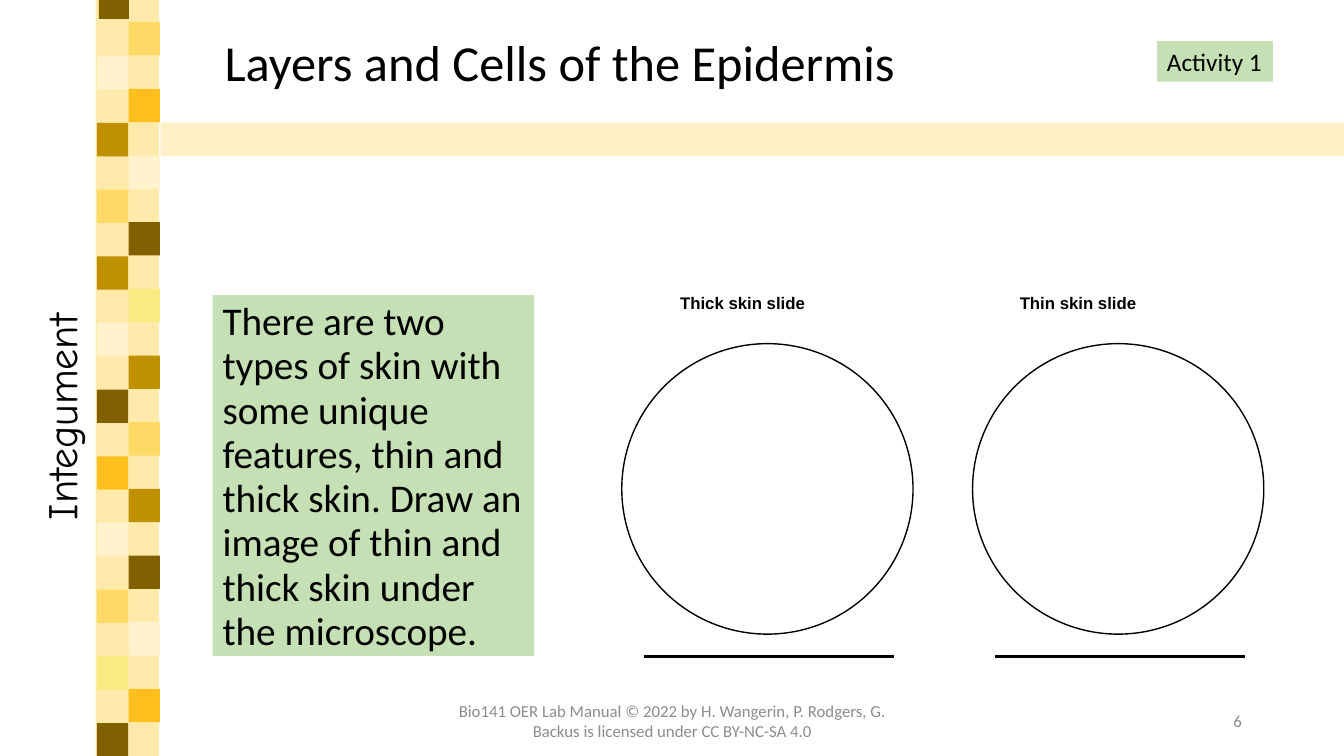
import pptx
import pptx.dml.color
import pptx.enum.shapes
import pptx.enum.text
import pptx.oxml.ns
import pptx.util
from lxml import etree

Cm = pptx.util.Cm
Pt = pptx.util.Pt
RGBColor = pptx.dml.color.RGBColor
Shape = pptx.enum.shapes.MSO_SHAPE
Align = pptx.enum.text.PP_ALIGN
Anchor = pptx.enum.text.MSO_ANCHOR
qn = pptx.oxml.ns.qn

BLACK = RGBColor(0x00, 0x00, 0x00)
WHITE = RGBColor(0xFF, 0xFF, 0xFF)
GREY = RGBColor(0x8C, 0x8C, 0x8C)
GREEN = RGBColor(0xC5, 0xE0, 0xB4)
BAND = RGBColor(0xFF, 0xE6, 0x99)
BROWN = RGBColor(0x80, 0x60, 0x00)
OCHRE = RGBColor(0xBF, 0x90, 0x00)
AMBER = RGBColor(0xFF, 0xBF, 0x1D)
GOLD = RGBColor(0xFF, 0xD9, 0x66)
LEMON = RGBColor(0xFB, 0xEA, 0x82)
CREAM = RGBColor(0xFF, 0xF2, 0xCC)

SLIDE_WIDTH, SLIDE_HEIGHT = 33.87, 19.05
TILE_WIDTH, TILE_HEIGHT, TILE_PITCH = 0.79, 0.84, 1.68
# Left edge, first top and colours from the top down
TILE_COLUMNS = [
    (2.44, 1.42, [CREAM, OCHRE, GOLD, OCHRE, CREAM, BROWN,
                  AMBER, CREAM, GOLD, LEMON, BROWN]),
    (3.24, 0.56, [GOLD, AMBER, CREAM, BROWN, LEMON, OCHRE,
                  GOLD, OCHRE, BROWN, CREAM, AMBER]),
]
DRAWING_LEFTS = [15.67, 24.51]


def add_block(slide, left, top, width, height, color, opacity=100):
    """Add a borderless rectangle; opacity is a percentage."""
    block = slide.shapes.add_shape(
        Shape.RECTANGLE, Cm(left), Cm(top), Cm(width), Cm(height))
    block.shadow.inherit = False
    block.fill.solid()
    block.fill.fore_color.rgb = color
    block.line.fill.background()
    if opacity < 100:
        color_node = block._element.spPr.find(".//" + qn("a:srgbClr"))
        alpha = etree.SubElement(color_node, qn("a:alpha"))
        alpha.set("val", str(opacity * 1000))


def add_text(slide, left, top, width, height, text, size, font="Calibri",
             color=BLACK, fill=None, align=Align.LEFT, anchor=Anchor.TOP,
             spacing=None, bold=False, wrap=True):
    box = slide.shapes.add_textbox(Cm(left), Cm(top), Cm(width), Cm(height))
    if fill is not None:
        box.fill.solid()
        box.fill.fore_color.rgb = fill
    frame = box.text_frame
    frame.word_wrap = wrap
    frame.vertical_anchor = anchor
    para = frame.paragraphs[0]
    para.alignment = align
    if spacing:
        para.line_spacing = spacing
    span = para.add_run()
    span.text = text
    span.font.name = font
    span.font.size = Pt(size)
    span.font.bold = bold
    span.font.color.rgb = color
    return box


def add_tab_stop(para, position):
    tabs = etree.SubElement(para._p.get_or_add_pPr(), qn("a:tabLst"))
    tab = etree.SubElement(tabs, qn("a:tab"))
    tab.set("pos", str(Cm(position)))
    tab.set("algn", "l")


def add_tiles(slide):
    add_block(slide, 2.49, 0, 0.76, 0.48, BROWN)
    for left, first_top, colors in TILE_COLUMNS:
        for row, color in enumerate(colors):
            add_block(slide, left, first_top + row * TILE_PITCH,
                      TILE_WIDTH, TILE_HEIGHT, color)


def add_drawing_area(slide, left):
    """Add an empty circle to draw in, with a caption line below it."""
    circle = slide.shapes.add_shape(
        Shape.OVAL, Cm(left), Cm(8.66), Cm(7.34), Cm(7.32))
    circle.shadow.inherit = False
    circle.fill.background()
    circle.line.color.rgb = BLACK
    circle.line.width = Pt(1)
    rule = slide.shapes.add_connector(
        pptx.enum.shapes.MSO_CONNECTOR.STRAIGHT,
        Cm(left + 0.56), Cm(16.54), Cm(left + 6.86), Cm(16.54))
    rule.line.color.rgb = BLACK
    rule.line.width = Pt(2.25)
    etree.SubElement(rule._element.spPr, qn("a:effectLst"))


def main():
    deck = pptx.Presentation()
    deck.slide_width = Cm(SLIDE_WIDTH)
    deck.slide_height = Cm(SLIDE_HEIGHT)
    slide = deck.slides.add_slide(deck.slide_layouts[6])

    add_block(slide, 2.41, 0, 1.6, SLIDE_HEIGHT, BAND, opacity=82)
    add_block(slide, 4.05, 3.09, 29.82, 0.84, BAND, opacity=57)
    add_tiles(slide)
    chapter = add_text(slide, -6.71, 9.73, 16.51, 1.55, "Integument", 30,
                       font="Comic Neue", align=Align.CENTER)
    chapter.rotation = 270

    add_text(slide, 5.41, 0.84, 28.45, 4.11,
             "Layers and Cells of the Epidermis", 36, spacing=0.89)
    add_text(slide, 29.16, 1.04, 2.92, 1.02, "Activity 1", 18,
             fill=GREEN, wrap=False)
    add_text(slide, 5.36, 7.44, 8.1, 9.09,
             "There are two types of skin with some unique features, thin and "
             "thick skin. Draw an image of thin and thick skin under the "
             "microscope.", 28, fill=GREEN, spacing=0.94)

    for left in DRAWING_LEFTS:
        add_drawing_area(slide, left)
    labels = add_text(slide, 16.89, 7.21, 16.18, 1.12,
                      "Thick skin slide\tThin skin slide", 12, font="Arial",
                      fill=WHITE, spacing=1.07, bold=True)
    add_tab_stop(labels.text_frame.paragraphs[0], 8.56)

    add_text(slide, 11.23, 17.65, 11.43, 1.02,
             "Bio141 OER Lab Manual © 2022 by H. Wangerin, P. Rodgers, "
             "G. Backus is licensed under CC BY-NC-SA 4.0", 12, color=GREY,
             align=Align.CENTER, anchor=Anchor.MIDDLE)
    add_text(slide, 23.93, 17.65, 7.62, 1.02, "6", 12, color=GREY,
             align=Align.RIGHT, anchor=Anchor.MIDDLE)

    deck.save("out.pptx")


if __name__ == "__main__":
    main()
